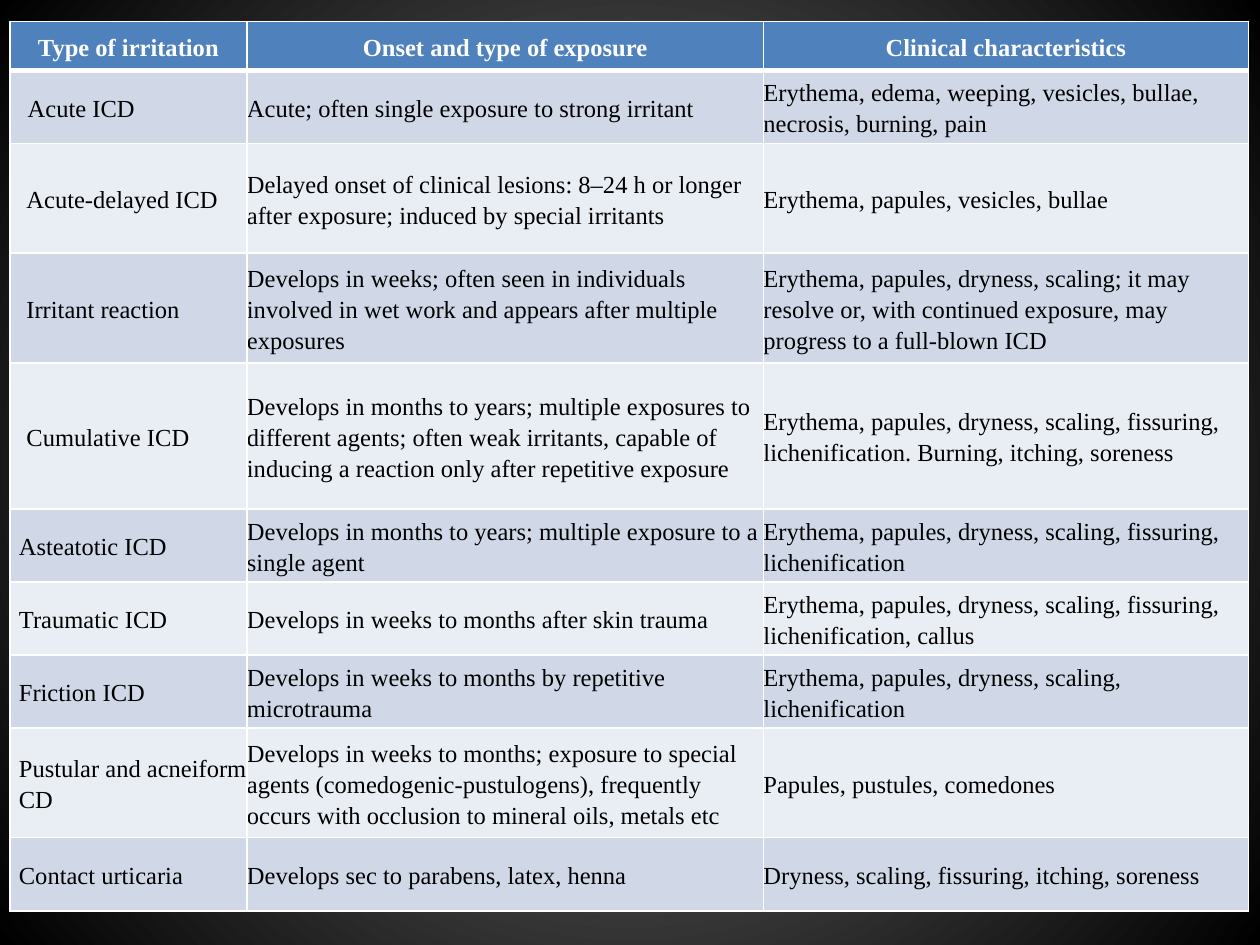
"""Build a slide with a table of irritant contact dermatitis types."""
from dataclasses import dataclass

from lxml import etree
from pptx import Presentation
from pptx import util as u
from pptx.dml.color import RGBColor
from pptx.enum import text
from pptx.oxml import ns, parse_xml

WHITE = RGBColor(0xFF, 0xFF, 0xFF)
BLACK = RGBColor(0x00, 0x00, 0x00)
GREY = RGBColor(0x7F, 0x7F, 0x7F)
HEADER_BLUE = RGBColor(0x4F, 0x81, 0xBD)
BANDS = (RGBColor(0xD0, 0xD8, 0xE8), RGBColor(0xE9, 0xED, 0xF4))
FONT = "Times New Roman"
COLUMN_WIDTHS = (1.88, 4.1, 3.85)
HEADINGS = ("Type of irritation", "Onset and type of exposure", "Clinical characteristics")
HEADER_HEIGHT = 0.39


@dataclass(frozen=True)
class Irritation:
    kind: str
    onset: str
    signs: str
    height: float = 0.58
    margin: float = 0.0
    indent: float = 0.0


IRRITATIONS = (
    Irritation("Acute ICD", "Acute; often single exposure to strong irritant",
               "Erythema, edema, weeping, vesicles, bullae, necrosis, burning, pain",
               margin=0.25, indent=-0.11),
    Irritation("Acute-delayed ICD",
               "Delayed onset of clinical lesions: 8–24 h or longer after exposure; "
               "induced by special irritants",
               "Erythema, papules, vesicles, bullae", height=0.87, margin=0.13),
    Irritation("Irritant reaction",
               "Develops in weeks; often seen in individuals involved in wet work "
               "and appears after multiple exposures",
               "Erythema, papules, dryness, scaling; it may resolve or, with continued "
               "exposure, may progress to a full-blown ICD", height=0.87, indent=0.13),
    Irritation("Cumulative ICD",
               "Develops in months to years; multiple exposures to different agents; often "
               "weak irritants, capable of inducing a reaction only after repetitive exposure",
               "Erythema, papules, dryness, scaling, fissuring, lichenification. "
               "Burning, itching, soreness", height=1.16, indent=0.13),
    Irritation("Asteatotic ICD",
               "Develops in months to years; multiple exposure to a single agent",
               "Erythema, papules, dryness, scaling, fissuring, lichenification", indent=0.07),
    Irritation("Traumatic ICD", "Develops in weeks to months after skin trauma",
               "Erythema, papules, dryness, scaling, fissuring, lichenification, callus",
               indent=0.07),
    Irritation("Friction ICD", "Develops in weeks to months by repetitive microtrauma",
               "Erythema, papules, dryness, scaling, lichenification", indent=0.07),
    Irritation("Pustular and acneiform CD",
               "Develops in weeks to months; exposure to special agents "
               "(comedogenic-pustulogens), frequently occurs with occlusion to mineral "
               "oils, metals etc",
               "Papules, pustules, comedones", height=0.87, margin=0.07),
    Irritation("Contact urticaria", "Develops sec to parabens, latex, henna",
               "Dryness, scaling, fissuring, itching, soreness", margin=0.07),
)


def paint_background(slide) -> None:
    slide._element.cSld.insert(0, parse_xml(
        f'<p:bg {ns.nsdecls("p", "a")}><p:bgPr><a:gradFill rotWithShape="1"><a:gsLst>'
        f'<a:gs pos="0"><a:srgbClr val="{GREY}"/></a:gs>'
        f'<a:gs pos="100000"><a:srgbClr val="{BLACK}"/></a:gs></a:gsLst>'
        '<a:path path="circle"><a:fillToRect l="50000" t="50000" r="50000" b="50000"/>'
        '</a:path></a:gradFill><a:effectLst/></p:bgPr></p:bg>'))


def draw_borders(cell, top: float = 1, bottom: float = 1) -> None:
    properties = cell._tc.get_or_add_tcPr()
    for position, (side, width) in enumerate((("L", 1), ("R", 1), ("T", top), ("B", bottom))):
        line = etree.Element(ns.qn(f"a:ln{side}"), w=str(u.Pt(width)))
        fill = etree.SubElement(line, ns.qn("a:solidFill"))
        etree.SubElement(fill, ns.qn("a:srgbClr"), val=str(WHITE))
        properties.insert(position, line)


def write(cell, wording: str, *, color: RGBColor = BLACK, bold: bool = False,
          align: text.PP_ALIGN = text.PP_ALIGN.LEFT,
          margin: float = 0.0, indent: float = 0.0) -> None:
    paragraph = cell.text_frame.paragraphs[0]
    paragraph.alignment = align
    paragraph.line_spacing = 1.15
    layout = paragraph._p.get_or_add_pPr()
    layout.set("marL", str(u.Inches(margin)))
    layout.set("indent", str(u.Inches(indent)))
    run = paragraph.add_run()
    run.text = wording
    run.font.name = FONT
    run.font.size = u.Pt(14)
    run.font.bold = bold
    run.font.color.rgb = color


def style_cell(cell, fill: RGBColor, top: float = 1, bottom: float = 1) -> None:
    cell.margin_left = cell.margin_right = cell.margin_top = cell.margin_bottom = 0
    cell.vertical_anchor = text.MSO_ANCHOR.MIDDLE
    cell.fill.solid()
    cell.fill.fore_color.rgb = fill
    draw_borders(cell, top, bottom)


def add_irritation_table(slide) -> None:
    heights = [HEADER_HEIGHT] + [irritation.height for irritation in IRRITATIONS]
    table = slide.shapes.add_table(
        len(heights), len(HEADINGS), u.Inches(0.08), u.Inches(0.17),
        u.Inches(sum(COLUMN_WIDTHS)), u.Inches(sum(heights))).table
    for column, width in zip(table.columns, COLUMN_WIDTHS):
        column.width = u.Inches(width)
    for row, height in zip(table.rows, heights):
        row.height = u.Inches(height)
    for column, heading in enumerate(HEADINGS):
        cell = table.cell(0, column)
        style_cell(cell, HEADER_BLUE, bottom=3)
        write(cell, heading, color=WHITE, bold=True, align=text.PP_ALIGN.CENTER)
    for row, irritation in enumerate(IRRITATIONS, start=1):
        kind, onset, signs = (table.cell(row, column) for column in range(3))
        for cell in (kind, onset, signs):
            style_cell(cell, BANDS[(row - 1) % 2], top=3 if row == 1 else 1)
        write(kind, irritation.kind, margin=irritation.margin, indent=irritation.indent)
        write(onset, irritation.onset)
        write(signs, irritation.signs)


def main() -> None:
    deck = Presentation()
    deck.slide_width, deck.slide_height = u.Inches(10), u.Inches(7.5)
    slide = deck.slides.add_slide(deck.slide_layouts[6])
    paint_background(slide)
    add_irritation_table(slide)
    deck.save("out.pptx")


if __name__ == "__main__":
    main()
